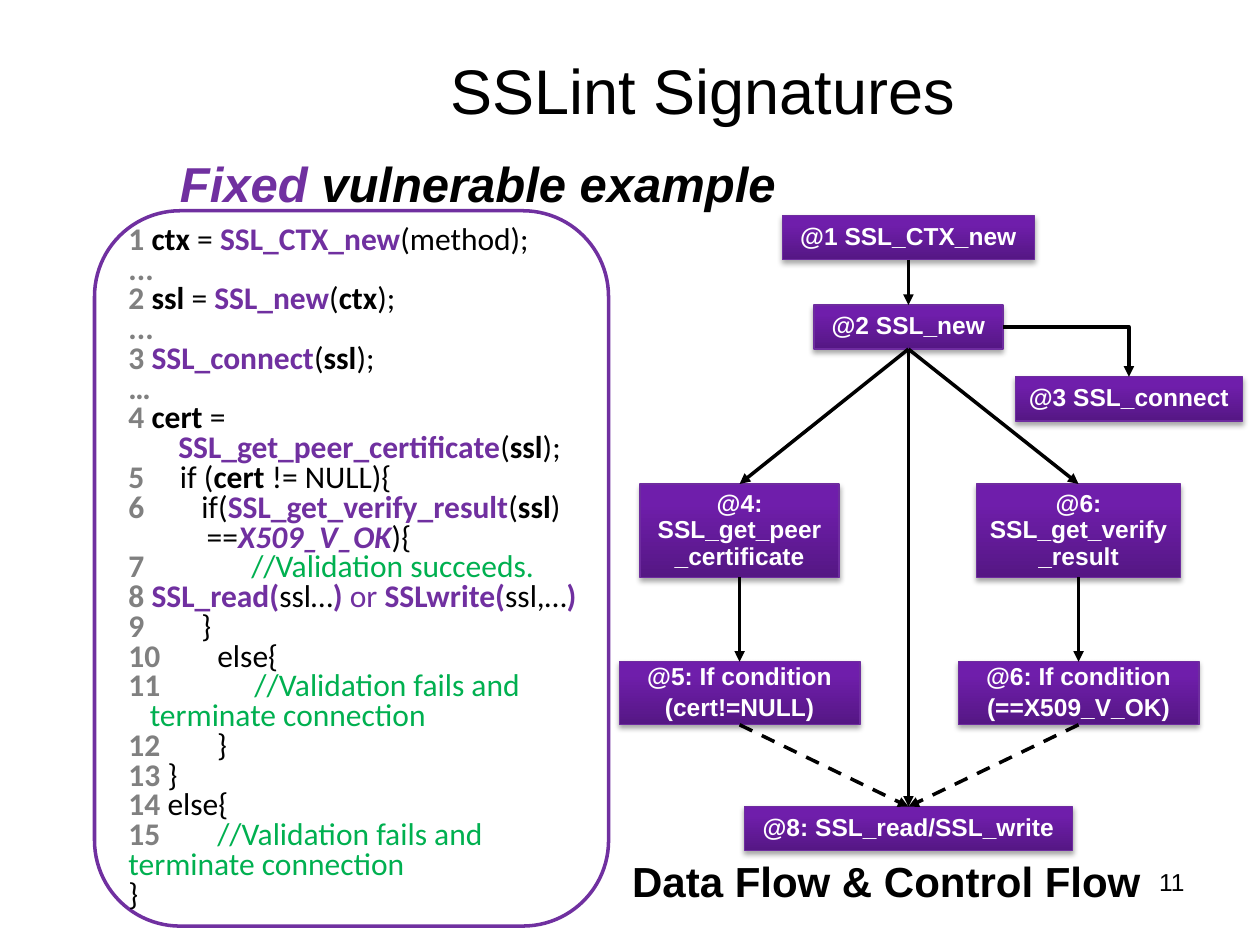
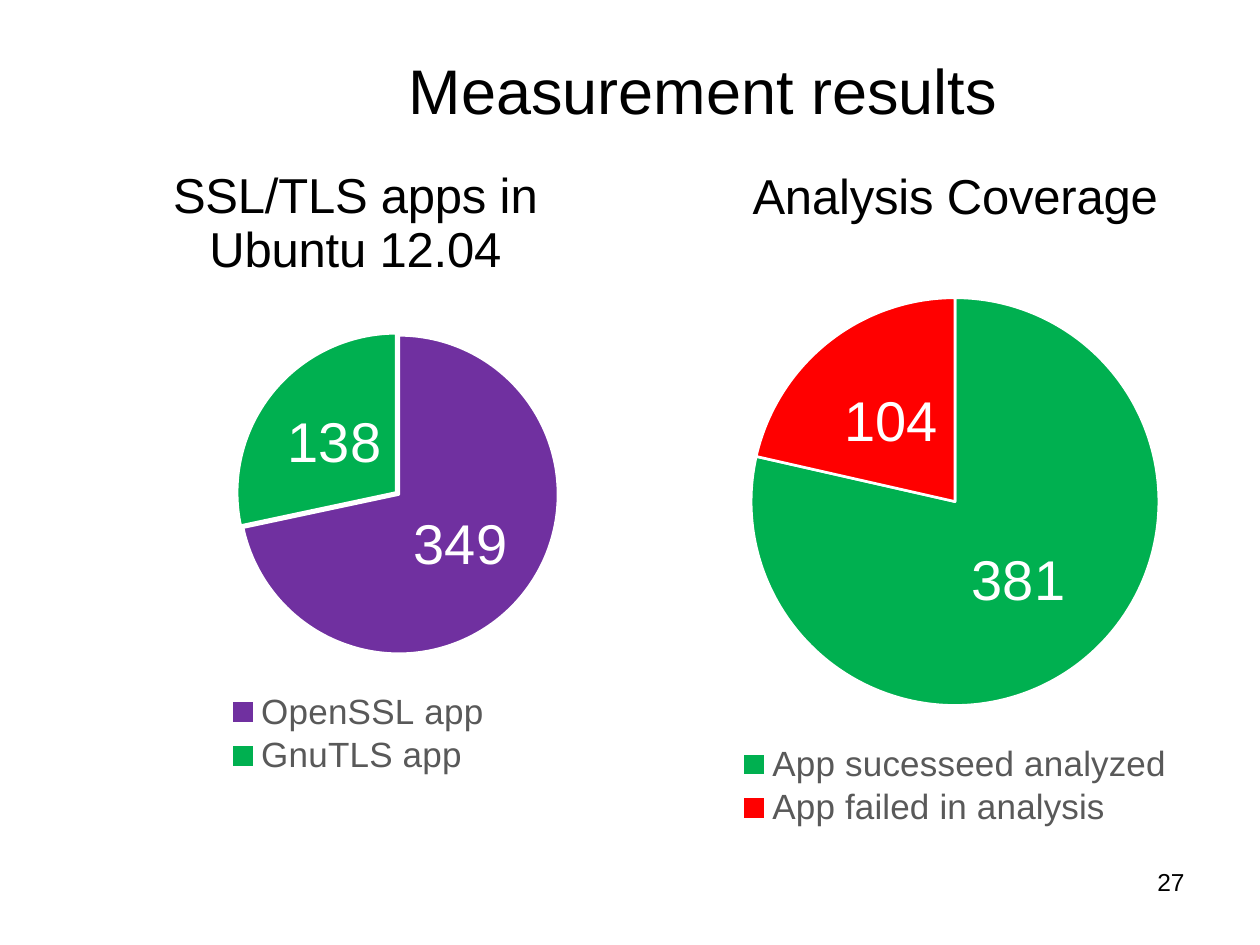
from lxml import etree
from pptx import Presentation
from pptx.chart.data import CategoryChartData
from pptx.dml.color import RGBColor
from pptx.enum.chart import XL_CHART_TYPE, XL_LABEL_POSITION, XL_LEGEND_POSITION
from pptx.enum.dml import MSO_LINE
from pptx.enum.shapes import MSO_CONNECTOR, MSO_SHAPE
from pptx.enum.text import MSO_ANCHOR, PP_ALIGN
from pptx.oxml.ns import qn
from pptx.util import Inches, Pt

LEFT, MID, RIGHT = PP_ALIGN.LEFT, PP_ALIGN.CENTER, PP_ALIGN.RIGHT
STRAIGHT, ELBOW = MSO_CONNECTOR.STRAIGHT, MSO_CONNECTOR.ELBOW
NODE, PANEL = MSO_SHAPE.FLOWCHART_PROCESS, MSO_SHAPE.FLOWCHART_ALTERNATE_PROCESS
TOP, BOTTOM, SIDE = 0, 2, 3  # connection sites

COLORS = {
    "black": "000000", "white": "FFFFFF", "purple": "7030A0", "green": "00B050",
    "red": "FF0000", "gray": "808080", "legend": "595959",
    "deep": "551784", "bright": "6F1EAB", "edge": "6E2C9F",
}
PAGE = (0, 0, 10, 7.5)

# Code styles: first letter of each segment
STYLES = {
    "n": {"color": "gray", "bold": True},
    "k": {"color": "black"},
    "b": {"color": "black", "bold": True},
    "f": {"color": "purple", "bold": True},
    "o": {"color": "purple"},
    "i": {"color": "purple", "bold": True, "italic": True},
    "c": {"color": "green"},
}
CODE = [
    "n1 |bctx |k= |fSSL_CTX_new|k(method);",
    "n...",
    "n2 |bssl |k= |fSSL_new|k(|bctx|k);",
    "n...",
    "n3 |fSSL_connect|k(|bssl|k);",
    "n…",
    "n4 |bcert|k =",
    "b       |fSSL_get_peer_certificate|k(|bssl|k);",
    "n5|k     if (|bcert|k != NULL){",
    "n6|k        if(|fSSL_get_verify_result|k(|bssl|k)",
    "n |k          ==|iX509_V_OK|k){",
    "n7               |c//Validation succeeds.",
    "n8 |fSSL_read(|kssl…|f)|o or |fSSLwrite(|kssl,…|f)",
    "n9 |k       }",
    "n10        |kelse{",
    "n11         \t|c//Validation fails and \t       terminate connection",
    "n12 |k       }",
    "n13|k }",
    "n14|k else{",
    "n15|c        //Validation fails and \tterminate connection",
    "k}",
]

# Flow nodes: centre, top, width, height in hundredths of the flow box
NODES = {
    "new": (45.8, 0, 40, 7, ["@1 SSL_CTX_new"]),
    "ssl": (45.8, 14.2, 30, 7, ["@2 SSL_new"]),
    "link": (80.8, 25.6, 36, 7, ["@3 SSL_connect"]),
    "use": (45.8, 93.8, 52, 7, ["@8: SSL_read/SSL_write"]),
    "check": (72.8, 42.6, 32.4, 14.8, ["@6: SSL_get_verify_result"]),
    "cert": (19, 42.6, 31.6, 14.8, ["@4: SSL_get_peer_certificate"]),
    "valid": (72.8, 70.8, 38.2, 10, ["@6: If condition", "(==X509_V_OK)"]),
    "found": (19, 70.8, 38.2, 10, ["@5: If condition", "(cert!=NULL)"]),
}
LINKS = [
    ("new", "ssl"), ("ssl", "cert"), ("ssl", "check"), ("ssl", "use"),
    ("cert", "found"), ("check", "valid"), ("ssl", "link"),
    ("found", "use"), ("valid", "use"),
]
BENT = ("ssl", "link")
DASHED = [("found", "use"), ("valid", "use")]


def rgb(name):
    return RGBColor.from_string(COLORS[name])


def part(box, x, y, w, h):
    """Turn hundredths of a box into inches."""
    left, top, wide, high = box
    return (left + wide * x / 100, top + high * y / 100,
            wide * w / 100, high * h / 100)


def emu(box):
    return [Inches(v) for v in box]


def style(font, color="black", **values):
    font.color.rgb = rgb(color)
    for key, value in {"name": "Arial", "bold": False, **values}.items():
        setattr(font, key, value)


def write(par, runs, align=LEFT, **base):
    """Add (text, format) runs to a paragraph."""
    par.alignment = align
    for text, values in runs:
        run = par.add_run()
        run.text = text
        style(run.font, **{**base, **values})


def label(slide, box, runs, align=LEFT, **base):
    frame = slide.shapes.add_textbox(*emu(box)).text_frame
    frame.word_wrap = True
    write(frame.paragraphs[0], runs, align, **base)


def base_slide(deck, title, number):
    slide = deck.slides.add_slide(deck.slide_layouts[5])
    head = slide.shapes.title
    spot = emu(part(PAGE, 10.8, 1.1, 90, 16.7))
    for key, value in zip(("left", "top", "width", "height"), spot):
        setattr(head, key, value)
    head.text_frame.vertical_anchor = MSO_ANCHOR.MIDDLE
    write(head.text_frame.paragraphs[0], [(title, {})], MID, size=Pt(36))
    label(slide, part(PAGE, 71.7, 91.1, 23.3, 6.9), [(number, {})], RIGHT, size=Pt(14))
    return slide


def code_panel(slide, box):
    panel = slide.shapes.add_shape(PANEL, *emu(box))
    panel.shadow.inherit = False
    panel.fill.solid()
    panel.fill.fore_color.rgb = rgb("white")
    panel.line.color.rgb = rgb("purple")
    panel.line.width = Pt(2)
    frame = slide.shapes.add_textbox(*emu(part(box, 4.2, 1.4, 96, 98.2))).text_frame
    frame.word_wrap = True
    for row, line in enumerate(CODE):
        par = frame.add_paragraph() if row else frame.paragraphs[0]
        par.line_spacing = Pt(17)
        runs = [(bit[1:], STYLES[bit[0]]) for bit in line.split("|")]
        write(par, runs, name="Calibri", size=Pt(18))


def add_node(slide, box, lines):
    node = slide.shapes.add_shape(NODE, *emu(box))
    # Gradient and edge
    node.fill.gradient()
    node.fill.gradient_angle = 90
    for stop, (spot, name) in zip(node.fill.gradient_stops, [(0, "deep"), (0.8, "bright")]):
        stop.position = spot
        stop.color.rgb = rgb(name)
    node.line.color.rgb = rgb("edge")
    node.line.width = Pt(0.75)
    # Soft shadow below
    node.shadow.inherit = False
    glow = etree.SubElement(node._element.spPr.find(qn("a:effectLst")), qn("a:outerShdw"),
                            blurRad=str(Pt(3.1)), dist=str(Pt(1.8)), dir="5400000",
                            rotWithShape="0")
    tint = etree.SubElement(glow, qn("a:srgbClr"), val=COLORS["black"])
    etree.SubElement(tint, qn("a:alpha"), val="35000")
    # Text
    frame = node.text_frame
    frame.word_wrap = True
    frame.vertical_anchor = MSO_ANCHOR.MIDDLE
    for row, line in enumerate(lines):
        par = frame.add_paragraph() if row else frame.paragraphs[0]
        par.line_spacing = 0.9
        if row:
            par.space_before = Pt(2.8)
        write(par, [(line, {})], MID, size=Pt(14), color="white", bold=True)
    return node


def add_arrow(slide, start, end, bent, dashed):
    arrow = slide.shapes.add_connector(ELBOW if bent else STRAIGHT, 0, 0, 0, 0)
    arrow.begin_connect(start, SIDE if bent else BOTTOM)
    arrow.end_connect(end, TOP)
    arrow.line.color.rgb = rgb("black")
    arrow.line.width = Pt(2)
    if dashed:
        arrow.line.dash_style = MSO_LINE.DASH
    props = arrow._element.spPr
    if bent:
        props.find(qn("a:prstGeom")).set("prst", "bentConnector2")
    etree.SubElement(props.find(qn("a:ln")), qn("a:tailEnd"), type="triangle")
    etree.SubElement(props, qn("a:effectLst"))


def flow_chart(slide, box):
    nodes = {}
    for name, (mid, top, wide, high, lines) in NODES.items():
        nodes[name] = add_node(slide, part(box, mid - wide / 2, top, wide, high), lines)
    for pair in LINKS:
        add_arrow(slide, *[nodes[name] for name in pair], pair == BENT, pair in DASHED)


def set_layout(prior, owner, spot, inner=False):
    """Fix a chart part at shares of the chart; place it after prior or first."""
    for old in owner.findall(qn("c:layout")):
        owner.remove(old)
    layout = etree.Element(qn("c:layout"))
    manual = etree.SubElement(layout, qn("c:manualLayout"))
    values = [("layoutTarget", "inner")] if inner else []
    values += [("xMode", "edge"), ("yMode", "edge"), *zip("xywh", spot)]
    for key, value in values:
        etree.SubElement(manual, qn("c:" + key), val=str(value))
    if prior is None:
        owner.insert(0, layout)
    else:
        prior.addnext(layout)


def pie_chart(slide, box, title, slices, pie, key, burst=0):
    data = CategoryChartData()
    data.categories = [name for name, _, _ in slices]
    data.add_series("Series 1", [value for _, value, _ in slices])
    chart = slide.shapes.add_chart(XL_CHART_TYPE.PIE, *emu(box), data).chart
    style(chart.font, size=Pt(10))
    # Title
    chart.has_title = True
    write(chart.chart_title.text_frame.paragraphs[0], [(title, {})], MID, size=Pt(28))
    chart.chart_title.include_in_layout = False
    # Slices
    plot = chart.plots[0]
    plot.vary_by_categories = True
    series = plot.series[0]
    if burst:
        blast = etree.Element(qn("c:explosion"), val=str(burst))
        series._element.find(qn("c:tx")).addnext(blast)
    for spot, (_, _, color) in enumerate(slices):
        look = series.points[spot].format
        look.fill.solid()
        look.fill.fore_color.rgb = rgb(color)
        look.line.color.rgb = rgb("white")
        look.line.width = Pt(1.5)
    # Value labels
    labels = series.data_labels
    for name, value in {"show_value": True, "show_percentage": False,
                        "position": XL_LABEL_POSITION.CENTER}.items():
        setattr(labels, name, value)
    style(labels.font, "white", size=Pt(32))
    # Legend and plot places
    chart.has_legend = True
    legend = chart.legend
    legend.position = XL_LEGEND_POSITION.BOTTOM
    legend.include_in_layout = False
    style(legend.font, "legend", size=Pt(20))
    root = legend._element
    set_layout(root.find(qn("c:legendPos")), root, key)
    set_layout(None, chart._chartSpace.chart.plotArea, pie, inner=True)


def signature_slide(deck):
    slide = base_slide(deck, "SSLint Signatures", "11")
    code_panel(slide, part(PAGE, 7.5, 22.3, 40.8, 75.7))
    label(slide, part(PAGE, 13.3, 15.6, 76.1, 6.7),
          [("Fixed ", {"color": "purple"}), ("vulnerable example", {})],
          size=Pt(28), bold=True, italic=True)
    flow_chart(slide, part(PAGE, 49.2, 22.8, 50, 66.7))
    label(slide, part(PAGE, 49.1, 89.9, 42.5, 6.7),
          [("Data Flow & Control Flow", {})], MID, size=Pt(24), bold=True)


def result_slide(deck):
    slide = base_slide(deck, "Measurement results", "27")
    pie_chart(slide, part(PAGE, 5.8, 14.4, 44.8, 68.8), "SSL/TLS apps in Ubuntu 12.04",
              [("OpenSSL app", 349, "purple"), ("GnuTLS app", 138, "green")],
              (0.29, 0.3, 0.57, 0.5), (0.27, 0.85, 0.47, 0.14), burst=1)
    pie_chart(slide, part(PAGE, 54.5, 14.4, 42.6, 74.4), "Analysis Coverage",
              [("App sucesseed analyzed", 381, "green"),
               ("App failed in analysis", 104, "red")],
              (0.12, 0.23, 0.76, 0.58), (0.09, 0.86, 0.82, 0.13))


def main():
    deck = Presentation()
    deck.slide_width, deck.slide_height = Inches(PAGE[2]), Inches(PAGE[3])
    signature_slide(deck)
    result_slide(deck)
    deck.save("out.pptx")


if __name__ == "__main__":
    main()
